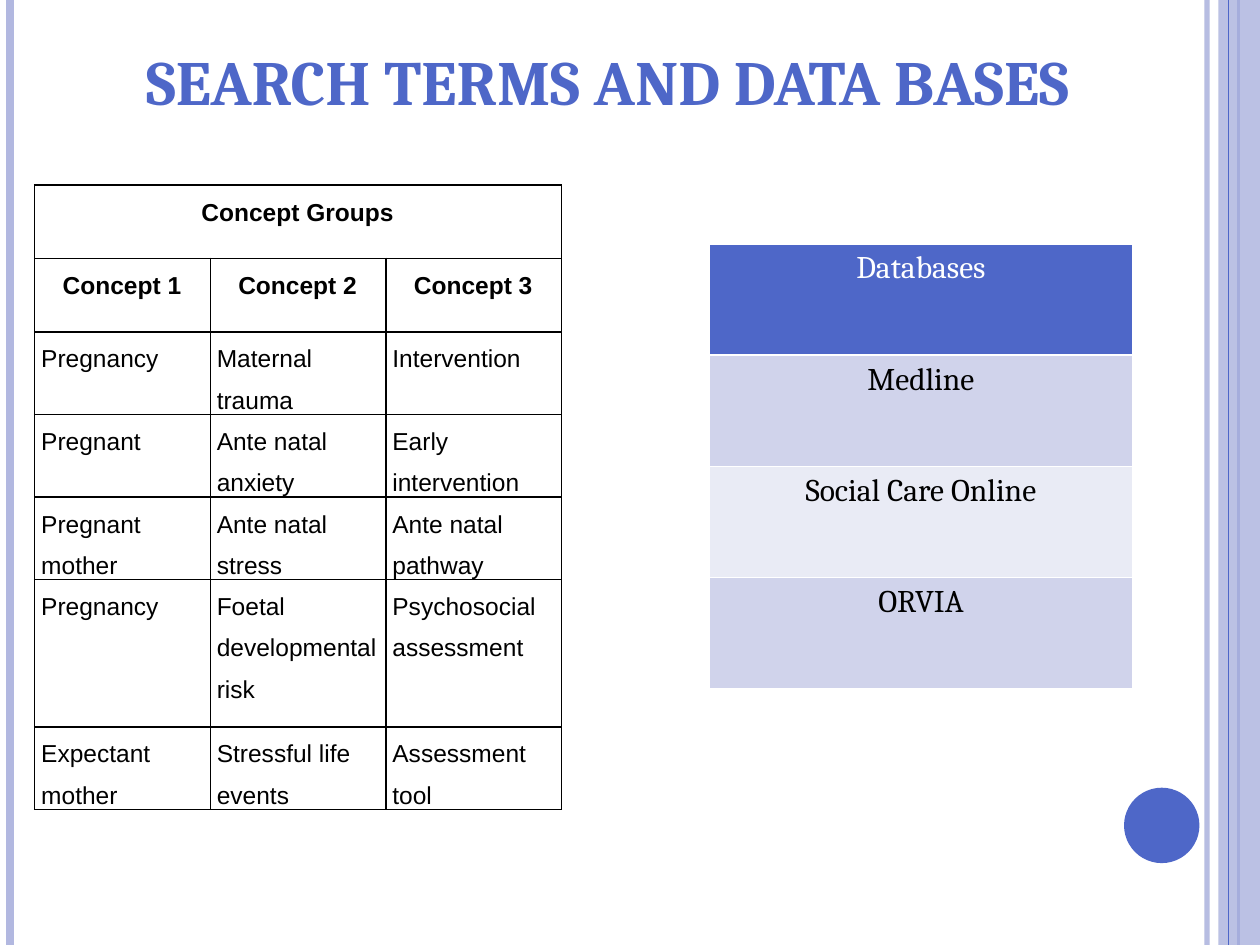
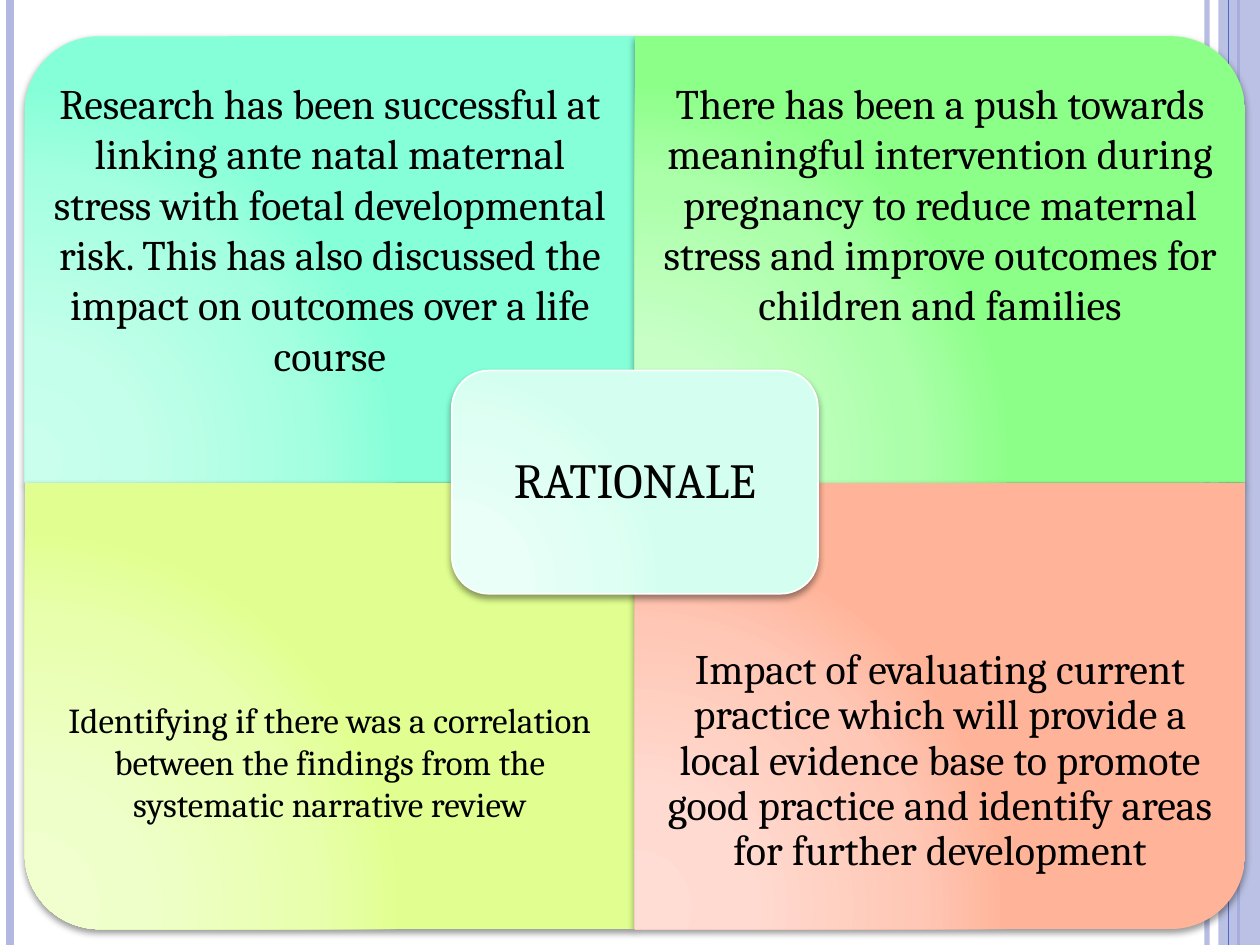
"""Build two review slides: search terms with databases, and the rationale."""
from dataclasses import dataclass

import pptx
import pptx.dml.color
import pptx.enum.shapes
import pptx.enum.text
import pptx.oxml
import pptx.oxml.ns
import pptx.util

Cm, Pt = pptx.util.Cm, pptx.util.Pt
SHAPE = pptx.enum.shapes.MSO_SHAPE
ANCHOR = pptx.enum.text.MSO_ANCHOR
ALIGN = pptx.enum.text.PP_ALIGN
qn = pptx.oxml.ns.qn
WIDTH, HEIGHT = 25.4, 19.05


@dataclass(frozen=True)
class Theme:
    accent: str = "4E67C8"
    pale: str = "B2B8E0"
    band_dark: str = "D0D3EB"
    band_light: str = "E9EBF5"
    white: str = "FFFFFF"
    black: str = "000000"
    serif: str = "Cambria"
    sans: str = "Arial"
    title: int = 36
    centre: int = 28
    body: int = 24
    small: int = 20
    databases: int = 18
    concepts: int = 14


def rgb(color):
    return pptx.dml.color.RGBColor.from_string(color)


def element(xml):
    tag, rest = xml.split(" ", 1)
    return pptx.oxml.parse_xml(f"{tag} {pptx.oxml.ns.nsdecls('a')} {rest}")


class Deck:
    """Hold the theme and the current slide, and draw each kind of element."""

    def __init__(self, theme):
        self.theme = theme
        self.prs = pptx.Presentation()
        self.prs.slide_width, self.prs.slide_height = Cm(WIDTH), Cm(HEIGHT)

    def add_slide(self):
        t = self.theme
        self.s = self.prs.slides.add_slide(self.prs.slide_layouts[6])
        self.rule(24.33, t.pale, 3, 93)
        self.rule(0.2, t.pale, 4.5)
        self.rule(24.97, t.accent, 1.5)
        band = self.shape(SHAPE.RECTANGLE, 24.56, 0, 0.84, HEIGHT, t.pale)
        self.fade(band, 87)
        self.rule(24.77, t.accent, 0.75)
        self.shape(SHAPE.OVAL, 22.66, 15.88, 1.52, 1.52, t.accent)

    def fade(self, sp, percent):
        for color in sp._element.spPr.iter(qn("a:srgbClr")):
            color.append(element(f'<a:alpha val="{percent * 1000}"/>'))

    def rule(self, x, color, width, opacity=None):
        line = self.s.shapes.add_connector(
            pptx.enum.shapes.MSO_CONNECTOR.STRAIGHT, Cm(x), 0, Cm(x), Cm(HEIGHT))
        line.line.color.rgb, line.line.width = rgb(color), Pt(width)
        line._element.spPr.append(element("<a:effectLst />"))
        if opacity:
            self.fade(line, opacity)

    def shape(self, kind, x, y, w, h, color=None):
        sp = self.s.shapes.add_shape(kind, Cm(x), Cm(y), Cm(w), Cm(h))
        sp.shadow.inherit = False
        sp.line.fill.background()
        if color:
            sp.fill.solid()
            sp.fill.fore_color.rgb = rgb(color)
        return sp

    def glow_shape(self, kind, x, y, w, h, colors, rotation=0):
        if rotation % 180:
            x, y, w, h = x + (w - h) / 2, y + (h - w) / 2, h, w
        sp = self.shape(kind, x, y, w, h)
        sp.rotation = rotation
        stops = "".join(
            f'<a:gs pos="{pos * 1000}"><a:srgbClr val="{color}"/></a:gs>'
            for pos, color in zip((0, 30, 75, 100), colors))
        spPr = sp._element.spPr
        spPr.find(qn("a:prstGeom")).addnext(element(
            f'<a:gradFill rotWithShape="0"><a:gsLst>{stops}</a:gsLst><a:path path="circle">'
            '<a:fillToRect l="5000" t="100000" r="120000" b="10000"/></a:path></a:gradFill>'))
        spPr.find(qn("a:effectLst")).append(element(
            f'<a:outerShdw blurRad="{Pt(4)}" dist="{Pt(2)}" dir="5400000" rotWithShape="0">'
            f'<a:srgbClr val="{self.theme.black}"><a:alpha val="40000"/></a:srgbClr></a:outerShdw>'))
        return sp

    def style(self, p, size, color, font=None, bold=False, align=ALIGN.CENTER, spacing=None):
        p.alignment = align
        if spacing:
            p.line_spacing = spacing
        p.font.size, p.font.bold = Pt(size), bold
        p.font.name = font or self.theme.serif
        p.font.color.rgb = rgb(color)

    def text(self, text, x, y, w, h, size, color=None, bold=False, spacing=None,
             anchor=ANCHOR.MIDDLE, inset=0.48, top=None):
        tf = self.s.shapes.add_textbox(Cm(x), Cm(y), Cm(w), Cm(h)).text_frame
        tf.word_wrap, tf.vertical_anchor = True, anchor
        tf.margin_left = tf.margin_right = tf.margin_bottom = Cm(inset)
        tf.margin_top = Cm(inset if top is None else top)
        tf.text = text
        self.style(tf.paragraphs[0], size, color or self.theme.black, bold=bold, spacing=spacing)

    def table(self, rows, x, y, col_width, heights, border):
        frame = self.s.shapes.add_table(len(rows), len(rows[0]), Cm(x), Cm(y),
                                        Cm(col_width * len(rows[0])), Cm(sum(heights)))
        table = frame.table
        table.first_row = table.horz_banding = False
        for col in table.columns:
            col.width = Cm(col_width)
        for row, height, texts in zip(table.rows, heights, rows):
            row.height = Cm(height)
            for cell, text in zip(row.cells, texts):
                cell.text = text
                for side in "LRTB":
                    cell._tc.get_or_add_tcPr().append(element(
                        f'<a:ln{side} w="{Pt(1)}"><a:solidFill><a:srgbClr val="{border}"/>'
                        f'</a:solidFill></a:ln{side}>'))
        return table

    def concept_table(self, rows, x, y, col_width, heights):
        t = self.theme
        table = self.table(rows, x, y, col_width, heights, t.black)
        for i, row in enumerate(table.rows):
            for cell in row.cells:
                cell.fill.background()
                cell.margin_left, cell.margin_right = Cm(0.13), Cm(0.15)
                cell.margin_top = cell.margin_bottom = 0
                self.style(cell.text_frame.paragraphs[0], t.concepts, t.black, t.sans,
                           bold=i < 2, align=ALIGN.CENTER if i < 2 else ALIGN.LEFT, spacing=1.5)
        table.cell(0, 0).merge(table.cell(0, len(rows[0]) - 1))

    def database_table(self, names, x, y, width, row_height):
        t = self.theme
        table = self.table([[name] for name in names], x, y, width,
                           [row_height] * len(names), t.white)
        for i, cell in enumerate(table.iter_cells()):
            cell.margin_left = cell.margin_right = Cm(0.18)
            cell.margin_top = cell.margin_bottom = Cm(0.13)
            cell.fill.solid()
            band = t.band_dark if i % 2 else t.band_light
            cell.fill.fore_color.rgb = rgb(band if i else t.accent)
            self.style(cell.text_frame.paragraphs[0], t.databases, t.black if i else t.white)


CONCEPTS = [
    ("Concept Groups", "", ""),
    ("Concept 1", "Concept 2", "Concept 3"),
    ("Pregnancy", "Maternal trauma", "Intervention"),
    ("Pregnant", "Ante natal anxiety", "Early intervention"),
    ("Pregnant mother", "Ante natal stress", "Ante natal pathway"),
    ("Pregnancy", "Foetal developmental risk", "Psychosocial assessment"),
    ("Expectant mother", "Stressful life events", "Assessment tool"),
]
DATABASES = ["Databases", "Medline", "Social Care Online", "ORVIA"]
QUADRANTS = [
    ("Research has been successful at linking ante natal maternal stress with foetal "
     "developmental risk. This has also discussed the impact on outcomes over a life course",
     ("C9FFEC", "C3FFEA", "A4FFE0", "84FFD7"), 270, Theme.body, None),
    ("There has been a push towards meaningful intervention during pregnancy to reduce "
     "maternal stress and improve outcomes for children and families",
     ("CCFFCB", "C7FFC6", "AAFFA8", "8CFF89"), 0, Theme.body, None),
    ("Identifying if there was a correlation between the findings from the systematic "
     "narrative review",
     ("F1FFCF", "EFFFCA", "E8FFAE", "E1FF90"), 180, Theme.small, None),
    ("Impact of evaluating current practice which will provide a local evidence base to "
     "promote good practice and identify areas for further development",
     ("FFDDD4", "FFDAD0", "FFC7B5", "FFB398"), 90, Theme.body, 0.9),
]


def search_slide(deck):
    t = deck.theme
    deck.add_slide()
    deck.concept_table(CONCEPTS, 0.7, 3.73, 3.54, [1.48] * 5 + [2.97, 1.48])
    deck.database_table(DATABASES, 14.3, 4.92, 8.53, 2.24)
    deck.text("SEARCH TERMS AND DATA BASES", 1.1, 0.72, 22.3, 1.8, t.title, t.accent,
              bold=True, anchor=ANCHOR.TOP, inset=0.13)


def rationale_slide(deck):
    t = deck.theme
    deck.add_slide()
    left, top, width, height, text_height = 0.5, 0.73, 12.3, 9, 6.76
    for i, (text, colors, rotation, size, spacing) in enumerate(QUADRANTS):
        row, col = divmod(i, 2)
        x, y = left + col * width, top + row * height
        deck.glow_shape(SHAPE.ROUND_1_RECTANGLE, x, y, width, height, colors, rotation)
        if row == 0:
            deck.text(text, x, y, width, text_height, size, anchor=ANCHOR.TOP, top=0.83)
        else:
            deck.text(text, x, y + height - text_height, width, text_height, size,
                      spacing=spacing)
    centre = deck.glow_shape(SHAPE.ROUNDED_RECTANGLE, 9.11, 7.47, 7.38, 4.5,
                             ("EAFFF7", "E9FFF7", "DEFFF3", "D4FFF0"))
    centre.line.color.rgb, centre.line.width = rgb(t.white), Pt(1)
    deck.text("RATIONALE", 9.33, 7.69, 6.94, 4.06, t.centre, spacing=0.9, inset=0.3)


def main():
    deck = Deck(Theme())
    search_slide(deck)
    rationale_slide(deck)
    deck.prs.save("out.pptx")


if __name__ == "__main__":
    main()
